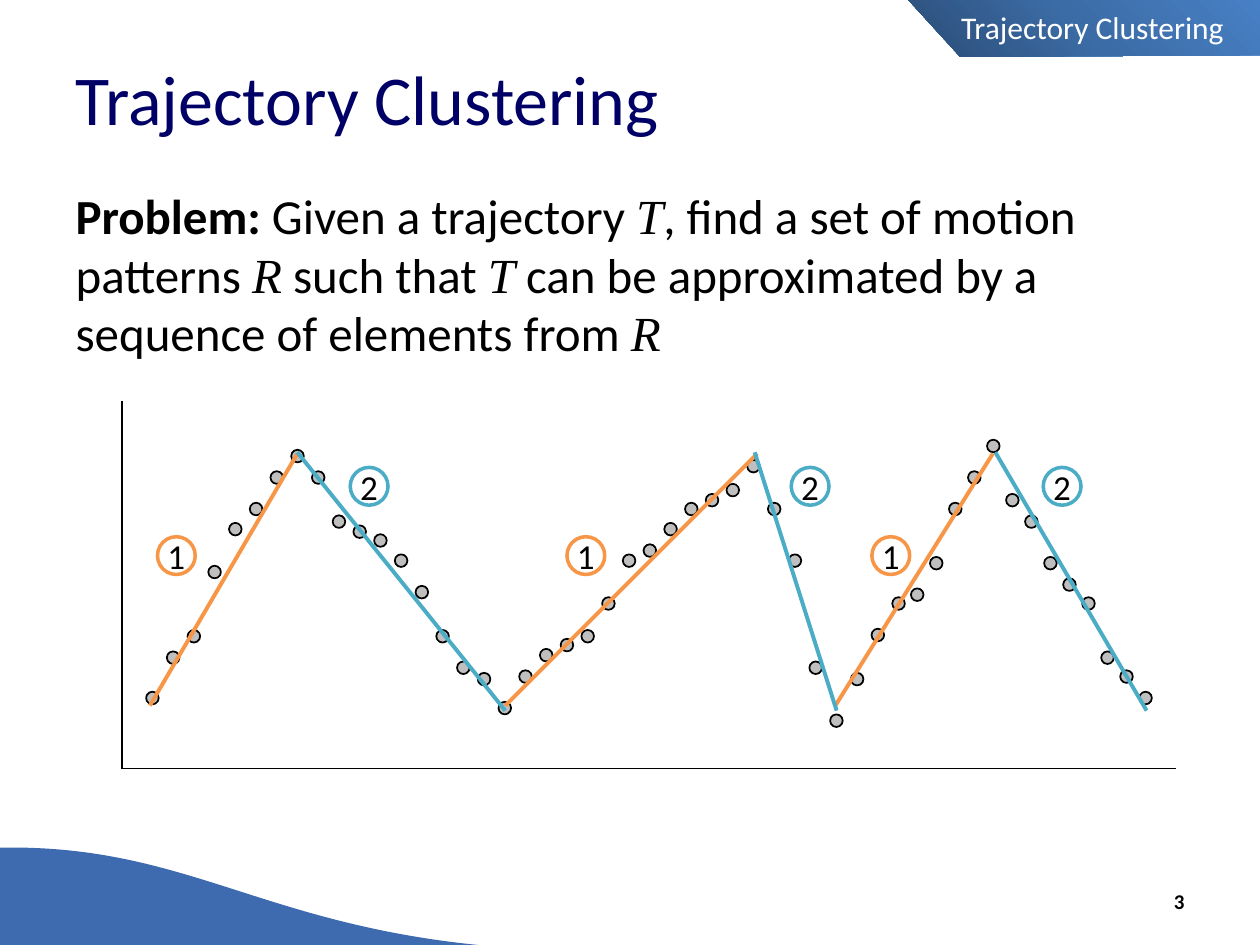
from lxml import etree
from pptx import Presentation
from pptx.dml.color import RGBColor
from pptx.enum.shapes import MSO_CONNECTOR, MSO_SHAPE
from pptx.enum.text import MSO_ANCHOR, MSO_AUTO_SIZE, PP_ALIGN
from pptx.oxml import parse_xml
from pptx.oxml.ns import nsdecls, qn
from pptx.util import Inches, Pt

SANS, SERIF = "Calibri", "Times New Roman"
BLACK, WHITE, NAVY, BLUE, GREY = "000000", "FFFFFF", "000066", "3E6BB0", "BFBFBF"
ORANGE, TEAL = "F79646", "4BACC6"

DOT_SIZE, BADGE_SIZE = 0.1, 0.3
# Each stretch of samples: first x, step in x, then the depth below the plot's top.
SAMPLES = [
    (0.19, 0.1645, [
        2.31, 1.99, 1.82, 1.31, 0.97, 0.81, 0.56, 0.39, 0.56, 0.91, 0.99, 1.06, 1.22,
        1.47, 1.82, 2.07, 2.16, 2.39, 2.14, 1.97, 1.89, 1.82, 1.56, 1.22, 1.14, 0.97,
        0.81, 0.74, 0.66, 0.47, 0.81, 1.22, 2.07, 2.49, 2.16, 1.81, 1.56]),
    (6.26, 0.151, [
        1.49, 1.24, 0.81, 0.56, 0.31, 0.74, 0.91, 1.24, 1.41, 1.56, 1.99, 2.14, 2.31]),
]
# Each pattern: label, colour, line y range, badge y, then (line x range, badge x).
PATTERNS = [
    ("1", ORANGE, (2.42, 0.42), 1.08,
     [(0.22, 1.39, 0.28), (3.04, 5.04, 3.53), (5.66, 6.91, 5.95)]),
    ("2", TEAL, (0.41, 2.46), 0.53,
     [(1.39, 3.04, 1.81), (5.02, 5.67, 5.31), (6.93, 8.13, 7.31)]),
]


def color(hex_value):
    return RGBColor.from_string(hex_value)


def place(shape, box):
    shape.left, shape.top, shape.width, shape.height = [Inches(v) for v in box]


def add_run(paragraph, text, size, hex_value=BLACK, font=SANS, bold=False, italic=False):
    run = paragraph.add_run()
    run.text = text
    run.font.name, run.font.size = font, Pt(size)
    run.font.bold, run.font.italic = bold, italic
    run.font.color.rgb = color(hex_value)
    return run


def open_text(shape, anchor, align):
    """Prepare the text frame and return its first paragraph."""
    frame = shape.text_frame
    frame.word_wrap = True
    frame.auto_size = MSO_AUTO_SIZE.NONE
    frame.vertical_anchor = anchor
    paragraph = frame.paragraphs[0]
    paragraph.alignment = align
    paragraph.space_before = Pt(0)
    return paragraph


def remove_bullet(paragraph):
    properties = paragraph._p.get_or_add_pPr()
    properties.set("marL", "0")
    properties.set("indent", "0")
    etree.SubElement(properties, qn("a:buNone"))


def send_to_back(shape):
    shape.element.getparent().insert(2, shape.element)


def add_line(slide, start, end, hex_value, width):
    line = slide.shapes.add_connector(
        MSO_CONNECTOR.STRAIGHT, *[Inches(v) for v in (*start, *end)])
    line.line.color.rgb = color(hex_value)
    line.line.width = Pt(width)
    etree.SubElement(line.element.spPr, qn("a:effectLst"))


def add_circle(slide, left, top, size, fill, outline, width):
    circle = slide.shapes.add_shape(
        MSO_SHAPE.OVAL, *[Inches(v) for v in (left, top, size, size)])
    circle.shadow.inherit = False
    circle.fill.solid()
    circle.fill.fore_color.rgb = color(fill)
    circle.line.color.rgb = color(outline)
    circle.line.width = Pt(width)
    return circle


def add_wave(slide, box):
    wave = slide.shapes.add_shape(
        MSO_SHAPE.FLOWCHART_DOCUMENT, *[Inches(v) for v in box])
    wave.shadow.inherit = False
    wave.fill.solid()
    wave.fill.fore_color.rgb = color(BLUE)
    wave.line.fill.background()
    wave.element.spPr.find(qn("a:xfrm")).set("flipV", "1")
    send_to_back(wave)


def add_corner_tab(slide, box):
    left, top, width, height = box
    right, bottom, slant = left + width, top + height, 0.41
    builder = slide.shapes.build_freeform(Inches(left), Inches(top))
    corners = [(right, top), (right, bottom - 0.01), (left + slant, bottom)]
    builder.add_line_segments([(Inches(x), Inches(y)) for x, y in corners])
    tab = builder.convert_to_shape()
    tab.shadow.inherit = False
    tab.line.fill.background()
    tab.fill.solid()
    stops = "".join(
        f'<a:gs pos="{position}000"><a:srgbClr val="{value}"/></a:gs>'
        for position, value in [(0, "2A4C75"), (50, "3C6CA6"), (100, "4780C5")])
    gradient = parse_xml(
        f'<a:gradFill {nsdecls("a")} rotWithShape="1"><a:gsLst>{stops}</a:gsLst>'
        '<a:path path="circle"><a:fillToRect t="100000" r="100000"/></a:path></a:gradFill>')
    properties = tab.element.spPr
    properties.replace(properties.find(qn("a:solidFill")), gradient)
    send_to_back(tab)


def fill_title(title, box):
    place(title, box)
    paragraph = open_text(title, MSO_ANCHOR.MIDDLE, PP_ALIGN.LEFT)
    run = add_run(paragraph, "Trajectory Clustering", 40, NAVY)
    shadow = parse_xml(
        f'<a:effectLst {nsdecls("a")}><a:outerShdw blurRad="38100" dist="38100" '
        'dir="2700000" algn="tl"><a:srgbClr val="000000"><a:alpha val="30000"/>'
        '</a:srgbClr></a:outerShdw></a:effectLst>')
    run.font._element.find(qn("a:solidFill")).addnext(shadow)


def fill_problem(body, box):
    place(body, box)
    paragraph = open_text(body, MSO_ANCHOR.TOP, PP_ALIGN.LEFT)
    remove_bullet(paragraph)
    add_run(paragraph, "Problem: ", 28, bold=True)
    for text, symbol in [
        ("Given a trajectory ", "T"),
        (", find a set of motion patterns ", "R"),
        (" such that ", "T"),
        (" can be approximated by a sequence of elements from ", "R"),
    ]:
        add_run(paragraph, text, 28)
        add_run(paragraph, symbol, 28, font=SERIF, italic=True)


def fill_section(body, box):
    place(body, box)
    paragraph = open_text(body, MSO_ANCHOR.MIDDLE, PP_ALIGN.CENTER)
    remove_bullet(paragraph)
    add_run(paragraph, "Trajectory Clustering", 18, WHITE)


def add_page_number(slide, box):
    number = slide.shapes.add_textbox(*[Inches(v) for v in box])
    paragraph = open_text(number, MSO_ANCHOR.MIDDLE, PP_ALIGN.RIGHT)
    add_run(paragraph, "3", 12, bold=True)


def add_trajectory(slide, box):
    left, top, width, height = box
    origin = (left, top + height)
    add_line(slide, (left, top), origin, BLACK, 1)
    add_line(slide, origin, (left + width, top + height), BLACK, 1)
    for first, step, depths in SAMPLES:
        for index, depth in enumerate(depths):
            add_circle(slide, left + first + index * step, top + depth,
                       DOT_SIZE, GREY, BLACK, 1)
    for label, hue, (start_y, end_y), badge_y, places in PATTERNS:
        for start_x, end_x, badge_x in places:
            add_line(slide, (left + start_x, top + start_y),
                     (left + end_x, top + end_y), hue, 2.25)
            badge = add_circle(slide, left + badge_x, top + badge_y,
                               BADGE_SIZE, WHITE, hue, 2)
            frame = badge.text_frame
            frame.margin_left = frame.margin_right = 0
            frame.margin_top = frame.margin_bottom = 0
            paragraph = open_text(badge, MSO_ANCHOR.MIDDLE, PP_ALIGN.CENTER)
            add_run(paragraph, label, 20)


def main():
    presentation = Presentation()
    presentation.slide_width, presentation.slide_height = Inches(10), Inches(7.5)
    slide = presentation.slides.add_slide(presentation.slide_layouts[3])
    title, problem, section = slide.placeholders
    add_corner_tab(slide, (7.21, 0, 2.79, 0.45))
    add_wave(slide, (-1.63, 6.67, 6.38, 4.42))
    fill_problem(problem, (0.5, 1.42, 9, 5.28))
    fill_title(title, (0.5, 0.3, 9, 0.95))
    add_page_number(slide, (7.17, 6.95, 2.33, 0.4))
    fill_section(section, (7.42, 0, 2.5, 0.42))
    add_trajectory(slide, (0.97, 3.18, 8.36, 2.92))
    presentation.save("out.pptx")


if __name__ == "__main__":
    main()
